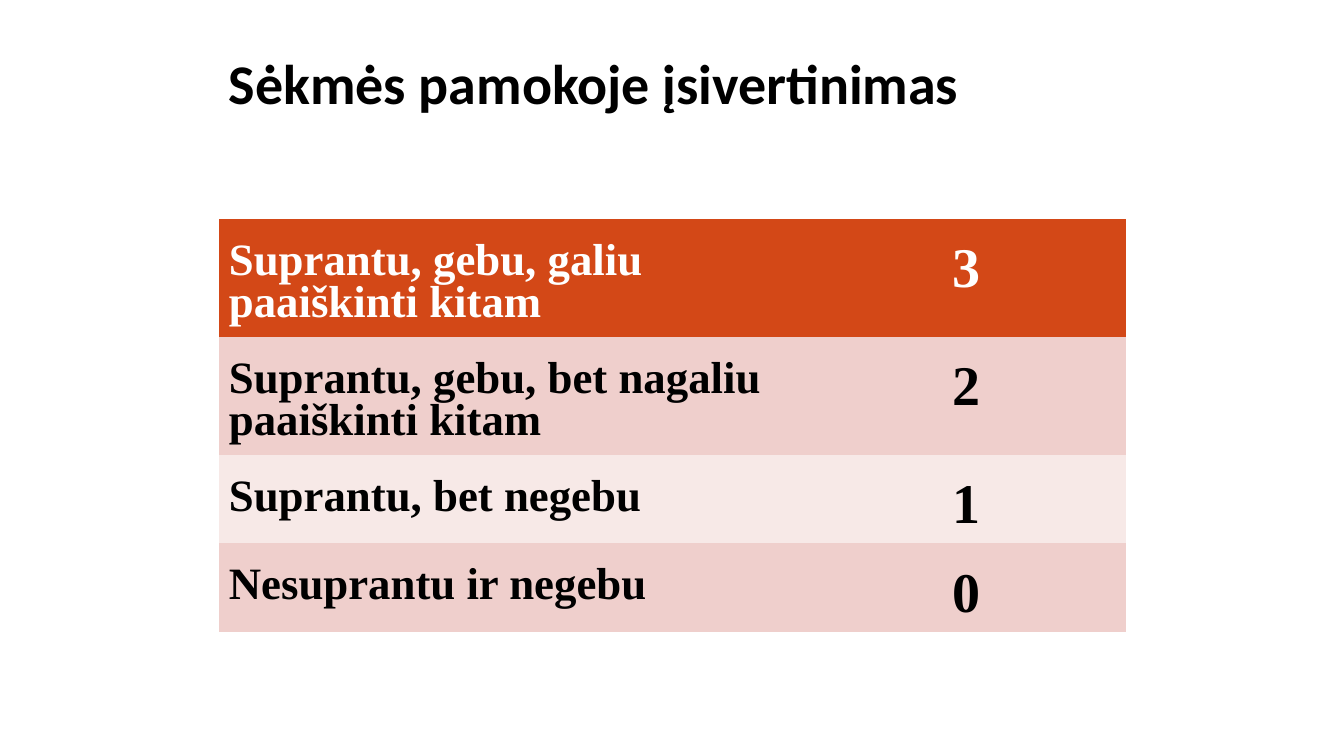
from dataclasses import dataclass

from pptx import Presentation
from pptx.dml.color import RGBColor
from pptx.enum.text import MSO_ANCHOR, MSO_AUTO_SIZE, PP_ALIGN
from pptx.oxml.ns import qn
from pptx.util import Inches, Pt


@dataclass
class Theme:
    white: str = "FFFFFF"
    black: str = "000000"
    head: str = "D34817"
    dark: str = "EFCFCC"
    light: str = "F7E9E7"
    large: int = 40
    small: int = 32
    sans: str = "Calibri"
    serif: str = "Times New Roman"


theme = Theme()


def style(par, font, size, color):
    for run in par.runs:
        run.font.name = font
        run.font.size = Pt(size)
        run.font.bold = True
        run.font.color.rgb = RGBColor.from_string(color)


# Slide
deck = Presentation()
deck.slide_width, deck.slide_height = Inches(13.33), Inches(7.5)
slide = deck.slides.add_slide(deck.slide_layouts[5])
left, width = Inches(2.17), Inches(9)

# Title
title = slide.shapes.title
title.left, title.top = left, Inches(0.5)
title.width, title.height = width, Inches(0.75)
frame = title.text_frame
frame.text = "Sėkmės pamokoje įsivertinimas"
frame.auto_size = MSO_AUTO_SIZE.NONE
frame.vertical_anchor = MSO_ANCHOR.BOTTOM
frame.margin_bottom = Inches(0.1)
frame.paragraphs[0].alignment = PP_ALIGN.LEFT
style(frame.paragraphs[0], theme.sans, theme.large, theme.black)

# Levels: wording, score, row height, fill, text colour
levels = [
    ("Suprantu, gebu, galiu paaiškinti kitam", "3", 1.17, theme.head, theme.white),
    ("Suprantu, gebu, bet nagaliu paaiškinti kitam", "2", 1.17, theme.dark, theme.black),
    ("Suprantu, bet negebu", "1", 0.88, theme.light, theme.black),
    ("Nesuprantu ir negebu", "0", 0.88, theme.dark, theme.black),
]
# Columns: width, top margin, alignment, type size
cols = [
    (5.83, 0.23, PP_ALIGN.LEFT, theme.small),
    (3.17, 0.27, PP_ALIGN.CENTER, theme.large),
]

# Table, in the plain style without grid lines
height = Inches(sum(level[2] for level in levels))
shape = slide.shapes.add_table(len(levels), len(cols), left, Inches(2.17), width, height)
table = shape.table
style_id = shape.element.find(".//" + qn("a:tableStyleId"))
style_id.text = "{2D5ABB26-0587-4C30-8999-92F81FD0307C}"

for col, (wide, *_) in zip(table.columns, cols):
    col.width = Inches(wide)

for row, (label, score, tall, fill, color) in zip(table.rows, levels):
    row.height = Inches(tall)
    for cell, text, (_, top, align, size) in zip(row.cells, (label, score), cols):
        cell.fill.solid()
        cell.fill.fore_color.rgb = RGBColor.from_string(fill)
        cell.margin_top = Inches(top)
        cell.text_frame.text = text
        par = cell.text_frame.paragraphs[0]
        par.alignment = align
        par.line_spacing = 0.84
        style(par, theme.serif, size, color)

deck.save("out.pptx")
